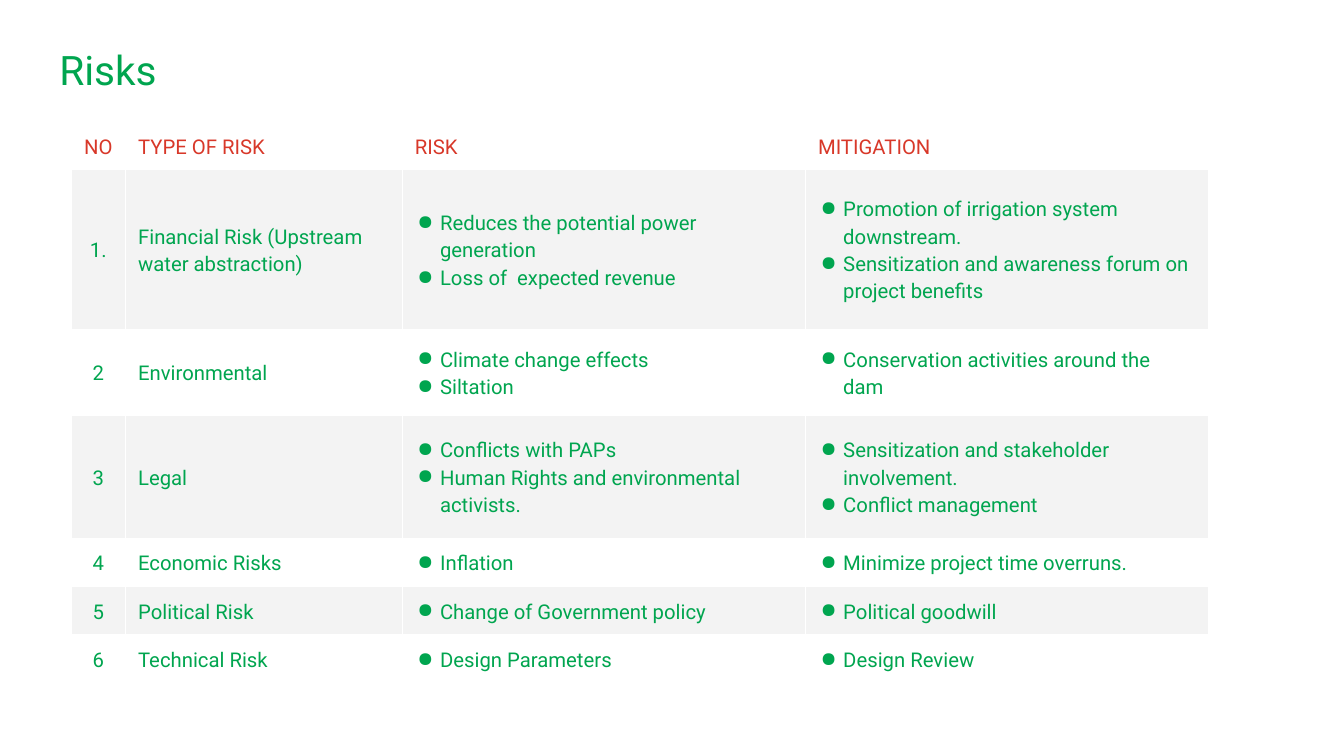
from dataclasses import dataclass
from typing import Any

from lxml import etree
from pptx import Presentation
from pptx import util as u
from pptx.dml.color import RGBColor
from pptx.enum import text
from pptx.oxml import ns

GREEN = RGBColor(0x00, 0xA5, 0x4F)
RED = RGBColor(0xD8, 0x38, 0x29)
WHITE = RGBColor(0xFF, 0xFF, 0xFF)
GREY = RGBColor(0xF3, 0xF3, 0xF3)

WIDTH, HEIGHT = u.Inches(26.67), u.Inches(15)
COLUMN_SHARES = [4.05, 20.59, 30, 30]
ROW_SHARES = [6.07, 21.2, 11.33, 16.27, 6.4, 6.4, 6.4]

HEADINGS = ["NO", "TYPE OF RISK", "RISK", "MITIGATION"]
RISKS = [
    ("1.", "Financial Risk (Upstream water abstraction)",
     ["Reduces the potential power generation", "Loss of  expected revenue"],
     ["Promotion of irrigation system downstream.",
      "Sensitization and awareness forum on project benefits"]),
    ("2", "Environmental",
     ["Climate change effects", "Siltation"],
     ["Conservation activities around the dam"]),
    ("3", "Legal",
     ["Conflicts with PAPs", "Human Rights and environmental activists."],
     ["Sensitization and stakeholder involvement.", "Conflict management"]),
    ("4", "Economic Risks", ["Inflation"], ["Minimize project time overruns."]),
    ("5", "Political Risk", ["Change of Government policy"], ["Political goodwill"]),
    ("6", "Technical Risk", ["Design Parameters"], ["Design Review"]),
]


def across(percent):
    return round(WIDTH * percent / 100)


def down(percent):
    return round(HEIGHT * percent / 100)


def add_element(parent, tag, **attributes):
    return etree.SubElement(parent, ns.qn(tag), attributes)


@dataclass
class SlideBuilder:
    slide: Any
    font_name: str = "Roboto"
    title_size: int = 58
    body_size: int = 29

    def style(self, paragraph, size, color):
        paragraph.font.name = self.font_name
        paragraph.font.size = u.Pt(size)
        paragraph.font.color.rgb = color

    def title(self, words, left, top, width, height):
        shape = self.slide.shapes.add_textbox(
            across(left), down(top), across(width), down(height))
        frame = shape.text_frame
        frame.word_wrap = True
        frame.margin_left = frame.margin_right = u.Inches(0.27)
        frame.margin_top = frame.margin_bottom = u.Inches(0.27)
        paragraph = frame.paragraphs[0]
        paragraph.text = words
        self.style(paragraph, self.title_size, GREEN)

    def bullet(self, paragraph):
        properties = paragraph._p.get_or_add_pPr()
        properties.set("marL", str(u.Inches(0.5)))
        properties.set("indent", str(u.Inches(-0.45)))
        color = add_element(properties, "a:buClr")
        add_element(color, "a:srgbClr", val=str(GREEN))
        add_element(properties, "a:buChar", char="●")

    def borders(self, cell):
        properties = cell._tc.get_or_add_tcPr()
        for side in "LRTB":
            line = add_element(properties, f"a:ln{side}", w=str(u.Pt(0.75)))
            fill = add_element(line, "a:solidFill")
            add_element(fill, "a:srgbClr", val=str(WHITE))

    def cell(self, cell, content, color, fill, centered):
        self.borders(cell)
        cell.fill.solid()
        cell.fill.fore_color.rgb = fill
        cell.vertical_anchor = text.MSO_ANCHOR.MIDDLE
        cell.margin_left = cell.margin_right = u.Inches(0.25)
        cell.margin_top = cell.margin_bottom = u.Inches(0.1)
        bulleted = isinstance(content, list)
        lines = content if bulleted else [content]
        frame = cell.text_frame
        for index, line in enumerate(lines):
            paragraph = frame.add_paragraph() if index else frame.paragraphs[0]
            paragraph.text = line
            paragraph.line_spacing = 1.15
            if centered:
                paragraph.alignment = text.PP_ALIGN.CENTER
            if bulleted:
                self.bullet(paragraph)
            self.style(paragraph, self.body_size, color)

    def table(self, rows, left, top):
        table = self.slide.shapes.add_table(
            len(rows), len(COLUMN_SHARES), across(left), down(top),
            across(sum(COLUMN_SHARES)), down(sum(ROW_SHARES))).table
        for column, share in zip(table.columns, COLUMN_SHARES):
            column.width = across(share)
        for row, share in zip(table.rows, ROW_SHARES):
            row.height = down(share)
        for row_index, row in enumerate(rows):
            color = GREEN if row_index else RED
            fill = GREY if row_index % 2 else WHITE
            for column_index, content in enumerate(row):
                self.cell(table.cell(row_index, column_index), content,
                          color, fill, column_index == 0)


def main():
    presentation = Presentation()
    presentation.slide_width, presentation.slide_height = WIDTH, HEIGHT
    builder = SlideBuilder(presentation.slides.add_slide(presentation.slide_layouts[6]))
    builder.title("Risks", 3.41, 4.2, 93.18, 11.13)
    builder.table([HEADINGS, *RISKS], 5.29, 16.27)
    presentation.save("out.pptx")


if __name__ == "__main__":
    main()
